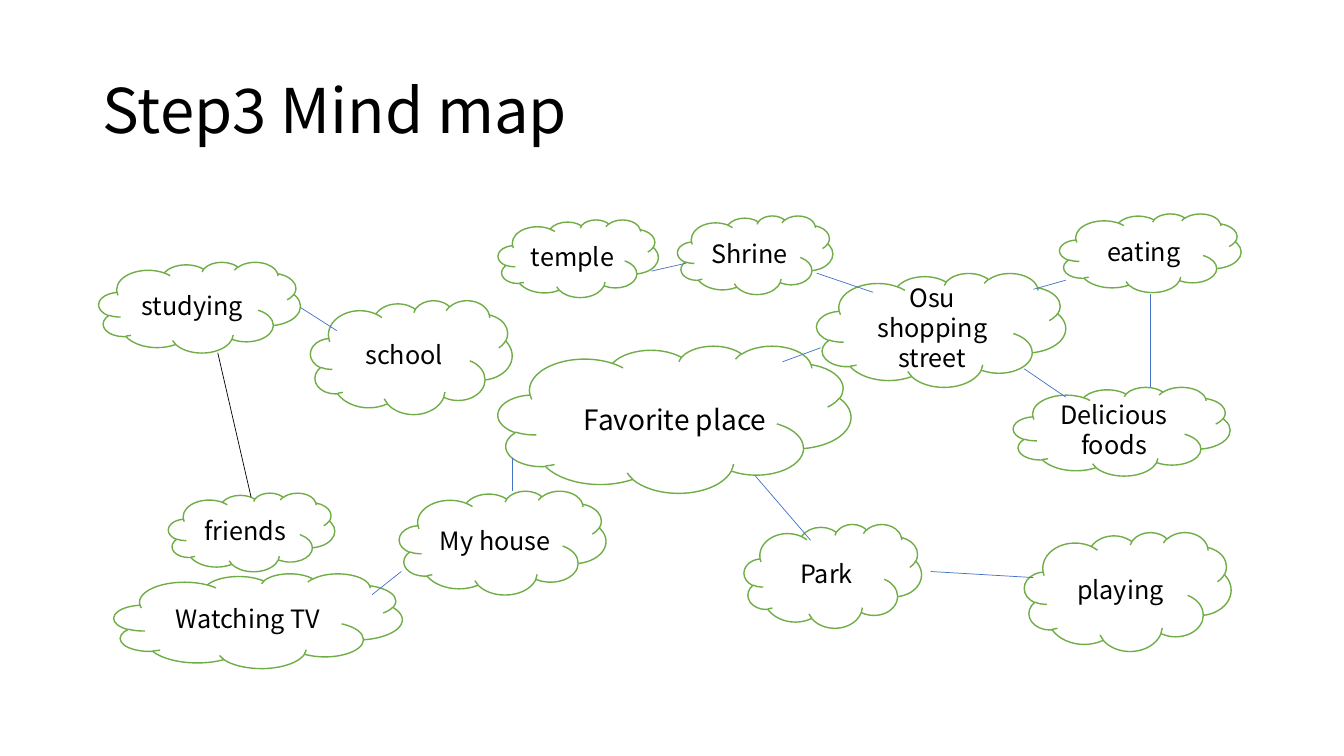
from lxml import etree
from pptx import Presentation
from pptx.dml.color import RGBColor
from pptx.enum.shapes import MSO_CONNECTOR, MSO_SHAPE
from pptx.enum.text import MSO_ANCHOR, MSO_AUTO_SIZE, PP_ALIGN
from pptx.oxml.ns import qn
from pptx.util import Pt

PX = 9144
FONT = "Noto Sans CJK JP"
BLACK = RGBColor(0x00, 0x00, 0x00)
WHITE = RGBColor(0xFF, 0xFF, 0xFF)
GREEN = RGBColor(0x70, 0xAD, 0x47)
BLUE = RGBColor(0x44, 0x72, 0xC4)
CLOUD = MSO_SHAPE.CLOUD
STRAIGHT = MSO_CONNECTOR.STRAIGHT
MIDDLE = MSO_ANCHOR.MIDDLE
LEFT, CENTER = PP_ALIGN.LEFT, PP_ALIGN.CENTER
NO_FIT = MSO_AUTO_SIZE.NONE

TITLE_BOX = (92, 40, 1150, 145)
MAP_ORIGIN = (98, 212)
TOPIC = ("Favorite place", 457, 182, 229, 44)

CLOUDS = [
    ("", 396, 131, 350, 146),
    ("Osu shopping street", 712, 59, 247, 113),
    ("temple", 396, 6, 159, 77),
    ("Park", 640, 308, 176, 103),
    ("Shrine", 574, 2, 154, 78),
    ("school", 210, 86, 200, 113),
    ("friends", 69, 277, 165, 78),
    ("studying", 0, 48, 200, 90),
    ("eating", 953, 0, 180, 78),
    ("Delicious foods", 907, 172, 215, 88),
    ("playing", 918, 316, 205, 118),
    ("My house", 298, 275, 205, 103),
    ("Watching TV", 15, 357, 286, 94),
]

LINKS = [
    (200, 93, 236, 116, BLUE),
    (118, 138, 151, 281, BLACK),
    (651, 260, 706, 324, BLUE),
    (825, 355, 927, 361, BLUE),
    (918, 154, 959, 182, BLUE),
    (1043, 80, 1043, 172, BLUE),
    (712, 59, 768, 78, BLUE),
    (959, 66, 927, 75, BLUE),
    (548, 57, 583, 49, BLUE),
    (716, 133, 678, 147, BLUE),
    (300, 355, 271, 378, BLUE),
    (410, 242, 410, 275, BLUE),
]


def emu(*lengths):
    return [n * PX for n in lengths]


def set_text(sp, text, size, align):
    tf = sp.text_frame
    tf.word_wrap = True
    tf.text = text
    p = tf.paragraphs[0]
    p.alignment = align
    p.font.name = FONT
    p.font.size = Pt(size)
    p.font.color.rgb = BLACK
    return tf


def add_title(s, box):
    sp = s.shapes.title
    sp.left, sp.top, sp.width, sp.height = emu(*box)
    tf = set_text(sp, "Step3 Mind map", 44, LEFT)
    tf.auto_size = NO_FIT
    tf.vertical_anchor = MIDDLE
    tf.paragraphs[0].line_spacing = 0.9


def add_cloud(s, text, box):
    sp = s.shapes.add_shape(CLOUD, *emu(*box))
    sp.shadow.inherit = False
    sp.fill.solid()
    sp.fill.fore_color.rgb = WHITE
    sp.line.color.rgb = GREEN
    sp.line.width = Pt(1)
    if text:
        set_text(sp, text, 18, CENTER).vertical_anchor = MIDDLE


def add_link(s, ends, color):
    cn = s.shapes.add_connector(STRAIGHT, *emu(*ends))
    cn.line.color.rgb = color
    cn.line.width = Pt(0.5)
    etree.SubElement(cn._element.spPr, qn("a:effectLst"))


def add_mind_map(s, origin):
    x, y = origin
    for text, dx, dy, w, h in CLOUDS:
        add_cloud(s, text, (x + dx, y + dy, w, h))
    for x1, y1, x2, y2, color in LINKS:
        add_link(s, (x + x1, y + y1, x + x2, y + y2), color)
    text, dx, dy, w, h = TOPIC
    set_text(s.shapes.add_textbox(*emu(x + dx, y + dy, w, h)), text, 20, CENTER)


def main():
    prs = Presentation()
    prs.slide_width, prs.slide_height = emu(1333, 750)
    s = prs.slides.add_slide(prs.slide_layouts[5])
    add_title(s, TITLE_BOX)
    add_mind_map(s, MAP_ORIGIN)
    prs.save("out.pptx")


if __name__ == "__main__":
    main()
